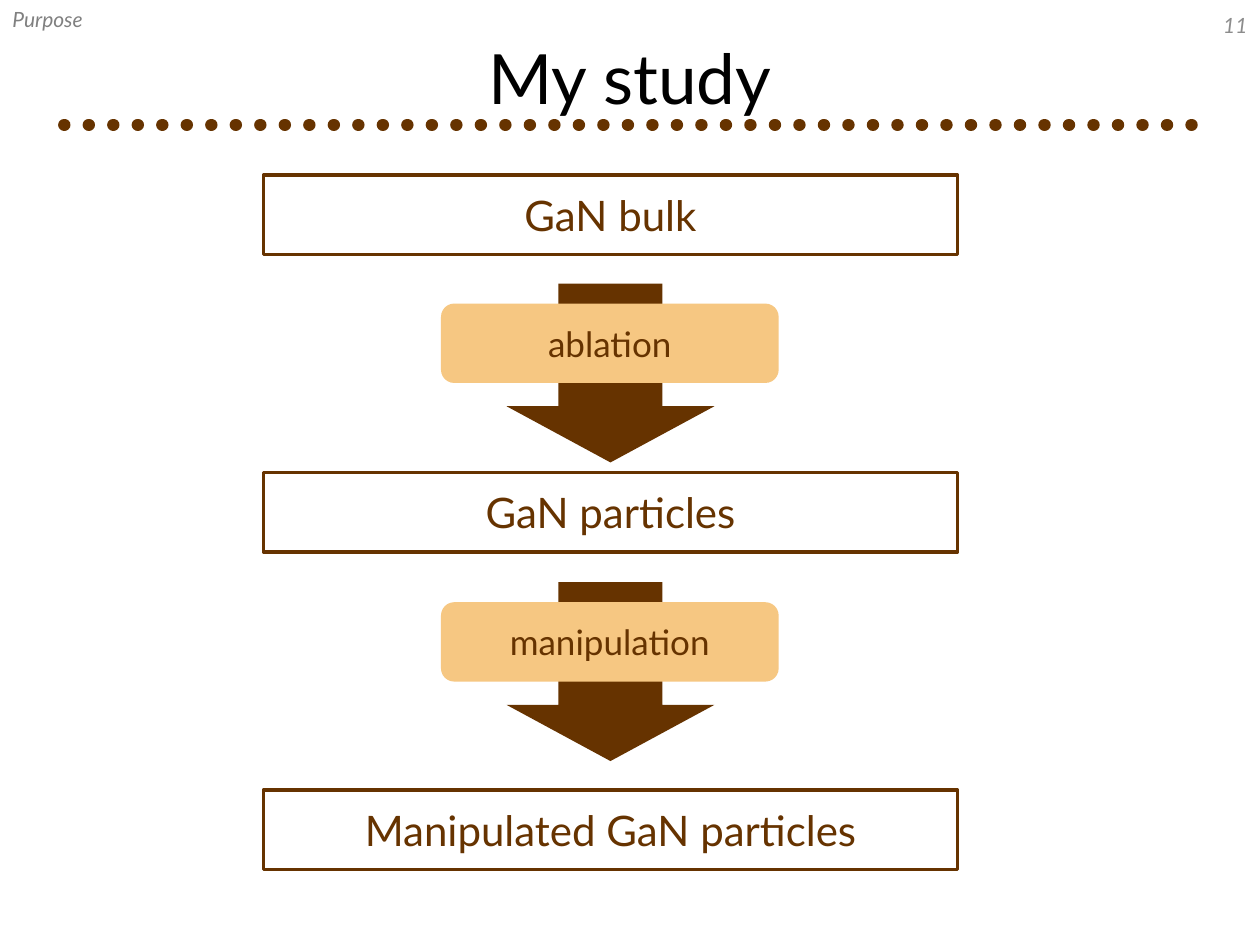
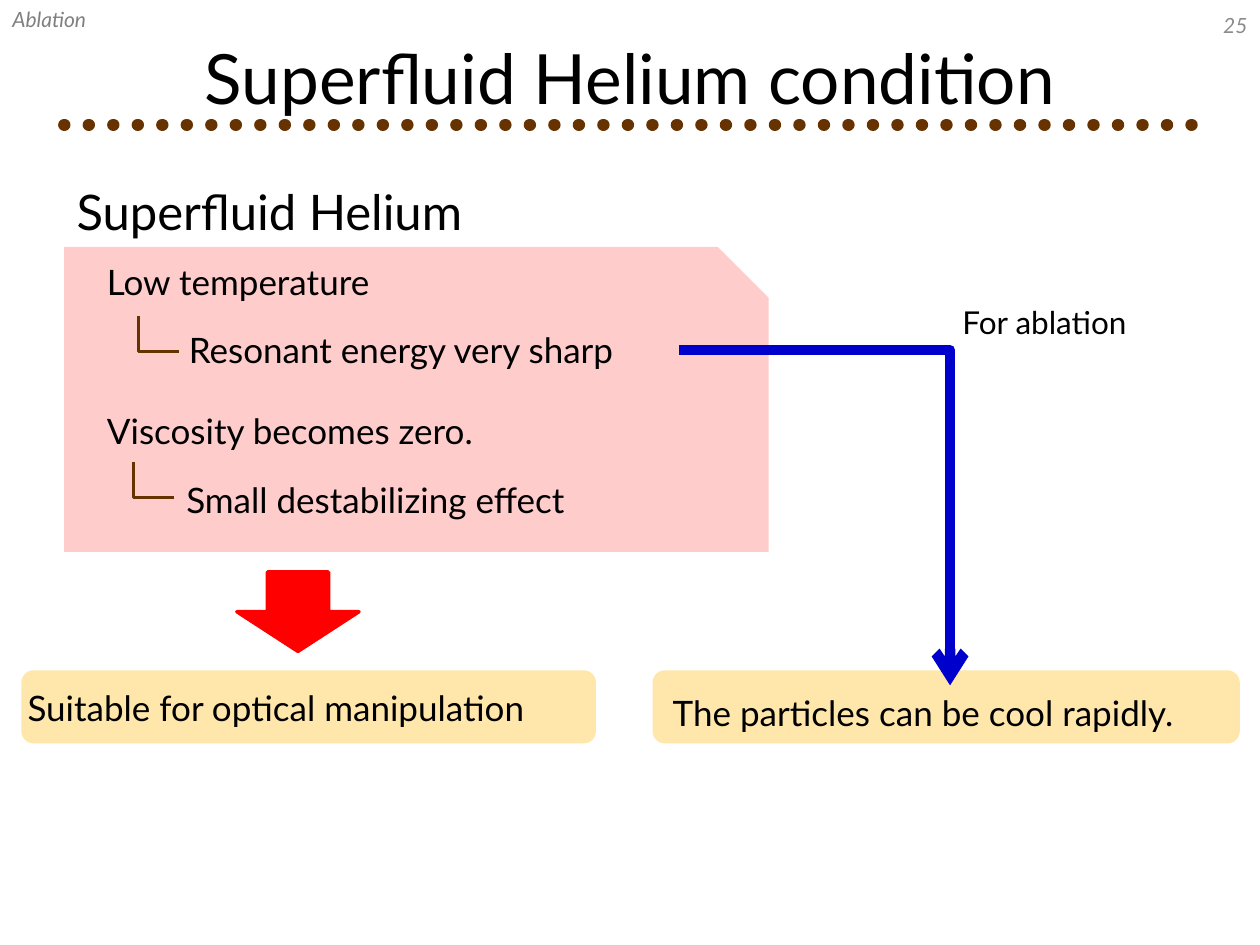
from dataclasses import dataclass

from lxml import etree
from pptx import Presentation
from pptx import util as u
from pptx.dml.color import RGBColor
from pptx.enum import dml, shapes, text
from pptx.oxml import ns


@dataclass(frozen=True)
class Theme:
    font: str = "Lato"
    black: str = "000000"
    brown: str = "663300"
    orange: str = "F6C782"
    cream: str = "FFE7AC"
    pink: str = "FFCCCC"
    red: str = "FF0000"
    blue: str = "0000CC"
    section_gray: str = "808080"
    number_gray: str = "8C8C8C"
    title_size: float = 39.6
    heading_size: float = 28
    box_size: float = 24
    body_size: float = 20
    note_size: float = 18
    small_size: float = 12


theme = Theme()
Kind = shapes.MSO_SHAPE
Align = text.PP_ALIGN
Anchor = text.MSO_ANCHOR


def write(shape, words, size=theme.body_size, color=theme.black, align=Align.LEFT,
          anchor=Anchor.TOP, italic=False, space_before=0):
    frame = shape.text_frame
    frame.word_wrap = True
    frame.auto_size = text.MSO_AUTO_SIZE.NONE
    frame.vertical_anchor = anchor
    paragraph = frame.paragraphs[0]
    paragraph.alignment = align
    paragraph.space_before = u.Pt(space_before)
    run = paragraph.add_run()
    run.text = words
    run.font.name = theme.font
    run.font.size = u.Pt(size)
    run.font.italic = italic
    run.font.color.rgb = RGBColor.from_string(color)


def paint(shape, fill=None, line=None, width=2):
    if isinstance(shape, shape_class):
        shape.shadow.inherit = False
        if fill:
            shape.fill.solid()
            shape.fill.fore_color.rgb = RGBColor.from_string(fill)
        else:
            shape.fill.background()
    if line:
        shape.line.color.rgb = RGBColor.from_string(line)
        shape.line.width = u.Pt(width)
    else:
        shape.line.fill.background()
    return shape


presentation = Presentation()
presentation.slide_width = u.Inches(10)
presentation.slide_height = u.Inches(7.5)
title_only = presentation.slide_layouts[5]

slides = []
for title, section, number in [
    ("My study", "Purpose", "11"),
    ("Superfluid Helium condition", "Ablation", "25"),
]:
    slide = presentation.slides.add_slide(title_only)
    heading = slide.shapes.title
    heading.left, heading.top = u.Inches(0.5), u.Inches(0.22)
    heading.width, heading.height = u.Inches(9), u.Inches(0.78)
    write(heading, title, size=theme.title_size, align=Align.CENTER, anchor=Anchor.MIDDLE)

    section_box = slide.shapes.add_textbox(0, 0, u.Inches(2.36), u.Inches(0.44))
    write(section_box, section, size=theme.small_size, color=theme.section_gray,
          italic=True, space_before=2.4)
    number_box = slide.shapes.add_textbox(u.Inches(7.67), 0, u.Inches(2.33), u.Inches(0.4))
    write(number_box, number, size=theme.small_size, color=theme.number_gray,
          align=Align.RIGHT, anchor=Anchor.MIDDLE, italic=True)
    shape_class = type(section_box)

    rule = slide.shapes.add_connector(
        shapes.MSO_CONNECTOR.STRAIGHT, u.Inches(0.51), u.Inches(0.99), u.Inches(9.49), u.Inches(0.99))
    paint(rule, line=theme.brown, width=7)
    rule.line.dash_style = dml.MSO_LINE.ROUND_DOT
    rule.line._ln.set("cap", "rnd")
    etree.SubElement(rule._element.spPr, ns.qn("a:effectLst"))
    slides.append(slide)

study, helium = slides

for top, words in [(1.39, "GaN bulk"), (3.75, "GaN particles"), (6.27, "Manipulated GaN particles")]:
    stage = study.shapes.add_shape(
        Kind.RECTANGLE, u.Inches(2.09), u.Inches(top), u.Inches(5.51), u.Inches(0.63))
    paint(stage, line=theme.brown)
    write(stage, words, size=theme.box_size, color=theme.brown, align=Align.CENTER, anchor=Anchor.MIDDLE)

for top, words in [(2.25, "ablation"), (4.62, "manipulation")]:
    arrow = study.shapes.add_shape(
        Kind.DOWN_ARROW, u.Inches(4.02), u.Inches(top), u.Inches(1.65), u.Inches(1.42))
    arrow.adjustments[1] = 0.314
    paint(arrow, fill=theme.brown)
    process = study.shapes.add_shape(
        Kind.ROUNDED_RECTANGLE, u.Inches(3.5), u.Inches(top + 0.16), u.Inches(2.68), u.Inches(0.63))
    paint(process, fill=theme.orange)
    write(process, words, color=theme.brown, align=Align.CENTER, anchor=Anchor.MIDDLE)

for kind, left, top, width, height, fill, line in [
    (Kind.SNIP_1_RECTANGLE, 0.51, 1.96, 5.59, 2.42, theme.pink, None),
    (Kind.ROUNDED_RECTANGLE, 5.18, 5.32, 4.66, 0.58, theme.cream, None),
    (Kind.ROUNDED_RECTANGLE, 0.17, 5.32, 4.56, 0.58, theme.cream, None),
    (Kind.DOWN_ARROW, 1.88, 4.54, 0.97, 0.63, theme.red, theme.red),
]:
    panel = helium.shapes.add_shape(
        kind, u.Inches(left), u.Inches(top), u.Inches(width), u.Inches(height))
    paint(panel, fill=fill, line=line)

for left, top, width, height, words, size in [
    (0.51, 1.39, 3.53, 0.57, "Superfluid Helium", theme.heading_size),
    (0.75, 2.02, 2.5, 0.44, "Low temperature", theme.body_size),
    (0.75, 3.2, 3.42, 0.44, "Viscosity becomes zero.", theme.body_size),
    (1.4, 2.56, 3.99, 0.44, "Resonant energy very sharp", theme.body_size),
    (1.38, 3.75, 3.65, 0.44, "Small destabilizing effect", theme.body_size),
    (0.12, 5.4, 4.62, 0.44, "Suitable for optical manipulation", theme.body_size),
    (5.24, 5.44, 4.61, 0.44, "The particles can be cool rapidly.", theme.body_size),
    (7.54, 2.36, 1.66, 0.4, "For ablation", theme.note_size),
]:
    label = helium.shapes.add_textbox(
        u.Inches(left), u.Inches(top), u.Inches(width), u.Inches(height))
    write(label, words, size=size)

for left, top in [(1.1, 2.51), (1.06, 3.67)]:
    right, bottom = u.Inches(left + 0.32), u.Inches(top + 0.28)
    builder = helium.shapes.build_freeform(u.Inches(left), u.Inches(top))
    builder.add_line_segments([(u.Inches(left), bottom), (right, bottom)], close=False)
    paint(builder.convert_to_shape(), line=theme.brown)

cooling_arrow = helium.shapes.add_connector(
    shapes.MSO_CONNECTOR.ELBOW, u.Inches(5.39), u.Inches(2.78), u.Inches(7.54), u.Inches(5.44))
paint(cooling_arrow, line=theme.blue, width=6)
cooling_arrow._element.spPr.find(ns.qn("a:prstGeom")).set("prst", "bentConnector2")
etree.SubElement(cooling_arrow.line._ln, ns.qn("a:tailEnd"), type="arrow")
etree.SubElement(cooling_arrow._element.spPr, ns.qn("a:effectLst"))

presentation.save("out.pptx")
